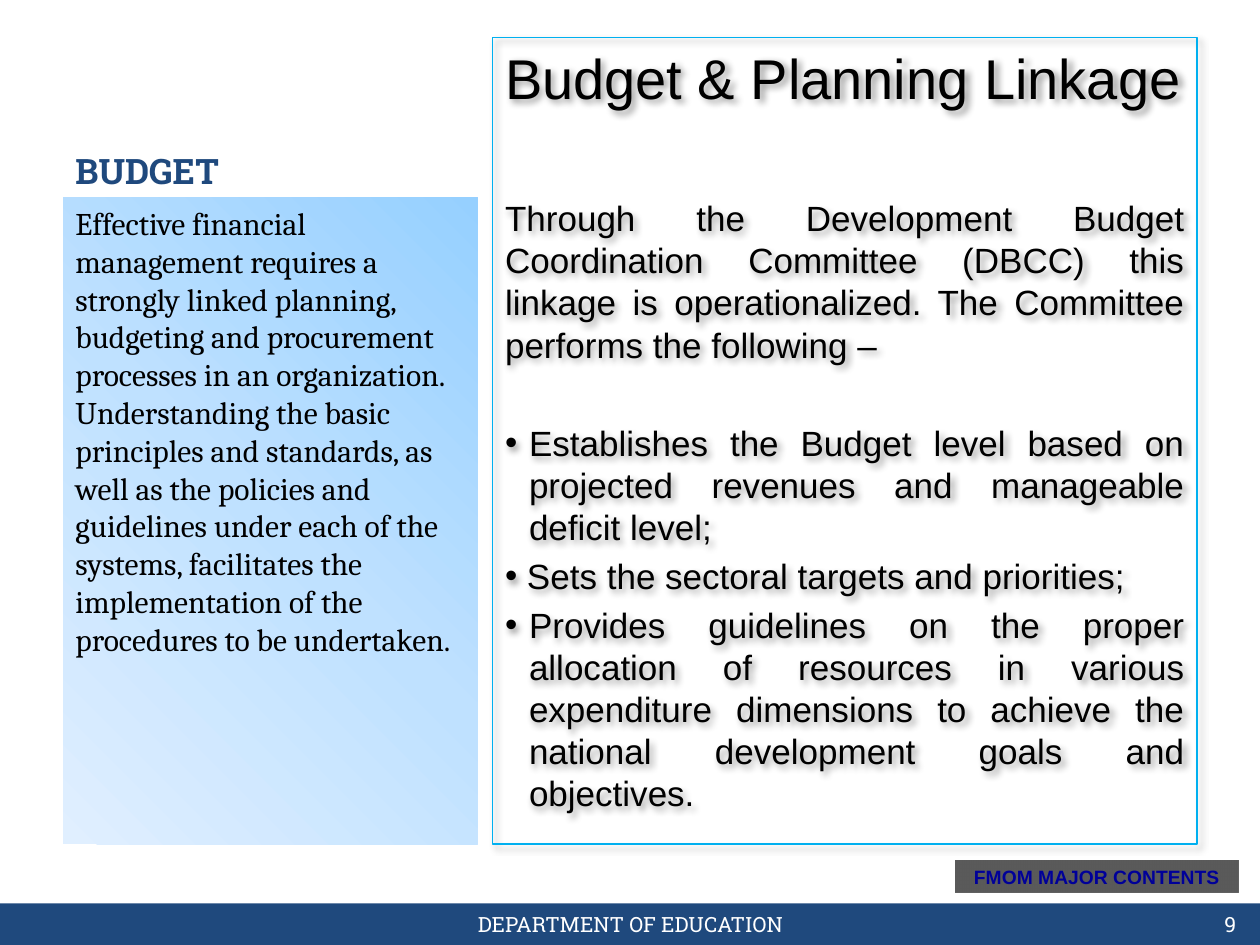
from dataclasses import dataclass

from lxml.etree import SubElement
from pptx import Presentation
from pptx.dml.color import RGBColor
from pptx.enum.shapes import MSO_SHAPE as SHAPE
from pptx.enum.text import MSO_ANCHOR as ANCHOR, PP_ALIGN as ALIGN
from pptx.oxml import parse_xml
from pptx.oxml.ns import nsdecls, qn
from pptx.util import Inches, Pt


@dataclass(frozen=True)
class Theme:
    navy: str = "1F497D"
    white: str = "FFFFFF"
    black: str = "000000"
    cyan: str = "00B0F0"
    gray: str = "808080"
    link: str = "000099"
    glow: tuple = ((0, "96D0FF"), (50, "BFE1FF"), (100, "E0EFFF"))
    slab: str = "Roboto Slab"
    sans: str = "Arial"
    serif: str = "Cambria"
    heading: int = 32
    title: int = 20
    body: int = 20
    summary: int = 18
    footer: int = 12
    button: int = 11


T = Theme()


def rgb(value):
    return RGBColor.from_string(value)


def add_box(slide, box, fill=None, line=None, width=0.75, kind=SHAPE.RECTANGLE):
    sp = slide.shapes.add_shape(kind, *map(Inches, box))
    sp.shadow.inherit = False
    if fill:
        sp.fill.solid()
        sp.fill.fore_color.rgb = rgb(fill)
    else:
        sp.fill.background()
    if line:
        sp.line.color.rgb = rgb(line)
        sp.line.width = Pt(width)
    else:
        sp.line.fill.background()
    return sp


def set_frame(sp, anchor=ANCHOR.TOP):
    tf = sp.text_frame
    tf.word_wrap = True
    tf.vertical_anchor = anchor
    return tf


def write(p, text, size, font, color, bold=False, align=ALIGN.LEFT, before=0):
    p.alignment = align
    p.space_before = Pt(before)
    r = p.add_run()
    r.text = text
    formats = {"size": Pt(size), "name": font, "bold": bold}
    for name, value in formats.items():
        setattr(r.font, name, value)
    r.font.color.rgb = rgb(color)


def add_label(slide, box, text, size, anchor, **style):
    sp = slide.shapes.add_textbox(*map(Inches, box))
    write(set_frame(sp, anchor).paragraphs[0], text, size, T.slab, **style)


def add_bullet(p, hang):
    pPr = p._p.get_or_add_pPr()
    pPr.set("marL", str(Inches(hang)))
    pPr.set("indent", str(-Inches(hang)))
    SubElement(pPr, qn("a:buFont")).set("typeface", T.sans)
    SubElement(pPr, qn("a:buChar")).set("char", "•")


def fill_corner_glow(sp):
    stops = "".join(
        f'<a:gs pos="{pos * 1000}"><a:srgbClr val="{color}"/></a:gs>'
        for pos, color in T.glow
    )
    glow = parse_xml(
        f'<a:gradFill {nsdecls("a")}><a:gsLst>{stops}</a:gsLst><a:path path="circle">'
        '<a:fillToRect l="100000" b="100000"/></a:path></a:gradFill>'
    )
    spPr = sp._element.spPr
    spPr.replace(spPr.find(qn("a:noFill")), glow)


def cast_shadow(sp):
    effects = sp._element.spPr.find(qn("a:effectLst"))
    effects.append(parse_xml(
        f'<a:outerShdw {nsdecls("a")} blurRad="{Pt(4)}" dist="{Pt(3)}" dir="2700000" '
        f'algn="tl" rotWithShape="0"><a:srgbClr val="{T.black}">'
        '<a:alpha val="40000"/></a:srgbClr></a:outerShdw>'
    ))


def add_summary(slide, box, title, text):
    x, y, w, h = box
    title_h = 1.27
    add_label(slide, (x, y, w, title_h), title, T.title, ANCHOR.BOTTOM,
              color=T.navy, bold=True)
    sp = add_box(slide, (x, y + title_h, w, h - title_h))
    fill_corner_glow(sp)
    write(set_frame(sp).paragraphs[0], text, T.summary, T.serif, T.black, before=3.6)


def add_linkage(slide, box, heading, intro, bullets):
    sp = add_box(slide, box, line=T.cyan)
    cast_shadow(sp)
    tf = set_frame(sp)
    write(tf.paragraphs[0], heading, T.heading, T.sans, T.black, before=6.4)
    body = {"size": T.body, "font": T.sans, "color": T.black, "align": ALIGN.JUSTIFY}
    write(tf.add_paragraph(), intro, before=49, **body)
    for i, (text, hang) in enumerate(bullets):
        p = tf.add_paragraph()
        write(p, text, before=4 if i else 32, **body)
        add_bullet(p, hang)


def add_button(slide, box, text):
    sp = add_box(slide, box, T.gray, T.black, 2, SHAPE.ACTION_BUTTON_CUSTOM)
    spPr = sp._element.spPr
    spPr.append(parse_xml(
        f'<a:scene3d {nsdecls("a")}><a:camera prst="legacyObliqueTopRight"/>'
        '<a:lightRig rig="legacyFlat3" dir="b"/></a:scene3d>'
    ))
    spPr.append(parse_xml(
        f'<a:sp3d {nsdecls("a")} extrusionH="0" prstMaterial="legacyMatte"/>'
    ))
    write(set_frame(sp, ANCHOR.MIDDLE).paragraphs[0], text, T.button, T.sans,
          T.link, bold=True, align=ALIGN.CENTER)


def add_footer(slide, box, text, number):
    x, y, w, h = box
    add_box(slide, box, T.navy)
    labels = ((3.42, 3.17, text, ALIGN.CENTER), (7.58, 2.33, number, ALIGN.RIGHT))
    for left, width, label, align in labels:
        add_label(slide, (x + left, y, width, h), label, T.footer, ANCHOR.MIDDLE,
                  color=T.white, align=align)


def main():
    prs = Presentation()
    prs.slide_width, prs.slide_height = Inches(10), Inches(7.5)
    slide = prs.slides.add_slide(prs.slide_layouts[6])
    add_footer(slide, (0, 7.17, 10, 0.33), "DEPARTMENT OF EDUCATION", "9")
    add_linkage(
        slide, (3.91, 0.3, 5.59, 6.4), "Budget & Planning Linkage",
        "Through the Development Budget Coordination Committee (DBCC) this linkage "
        "is operationalized. The Committee performs the following –",
        (
            ("Establishes the Budget level based on projected revenues and "
             "manageable deficit level; ", 0.19),
            (" Sets the sectoral targets and priorities;", 0),
            ("Provides guidelines on the proper allocation of resources in various "
             "expenditure dimensions to achieve the national development goals and "
             "objectives. ", 0.19),
        ),
    )
    add_summary(
        slide, (0.5, 0.3, 3.29, 6.4), "BUDGET",
        "Effective financial management requires a strongly linked planning, "
        "budgeting and procurement processes in an organization.  Understanding the "
        "basic principles and standards, as well as the policies and guidelines "
        "under each of the systems, facilitates the implementation of the "
        "procedures to be undertaken.",
    )
    add_button(slide, (7.58, 6.83, 2.25, 0.25), "FMOM MAJOR CONTENTS")
    prs.save("out.pptx")


if __name__ == "__main__":
    main()
